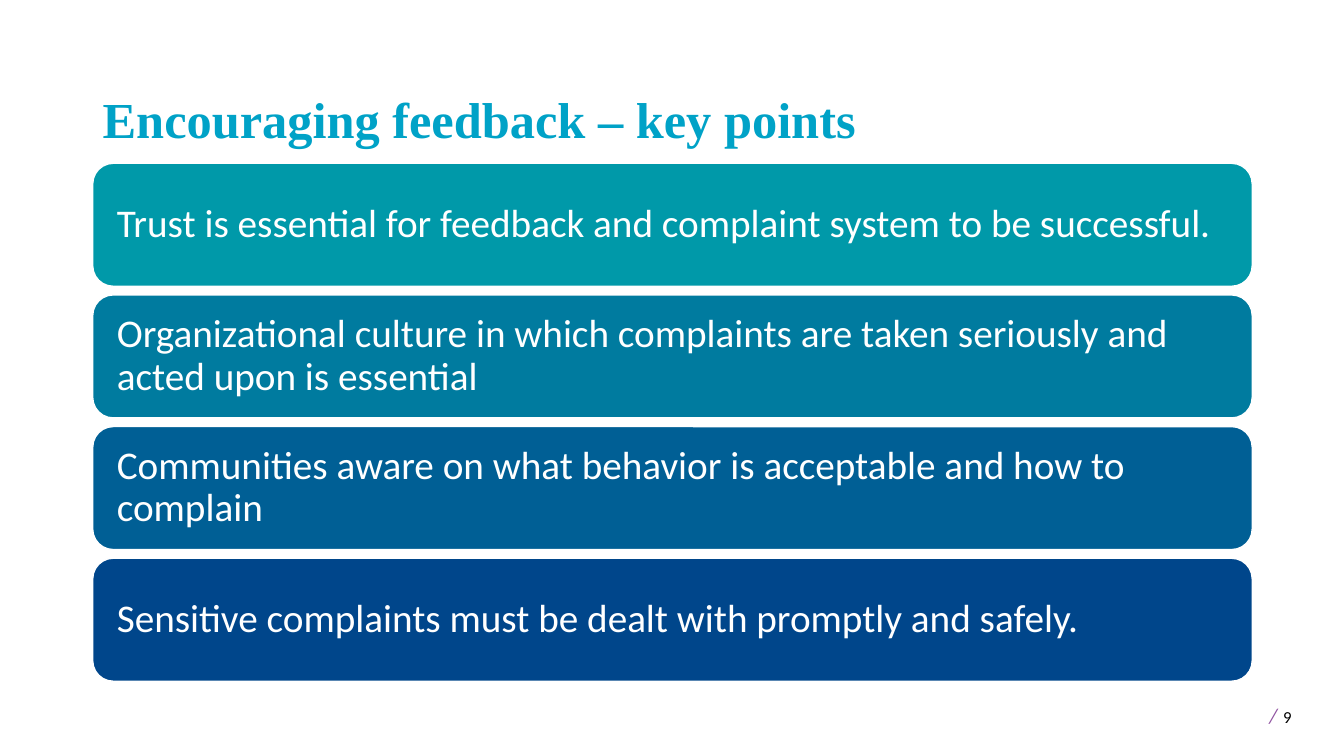
from dataclasses import dataclass

from pptx import Presentation
from pptx.dml.color import RGBColor
from pptx.enum.shapes import MSO_SHAPE as Shape
from pptx.enum.text import MSO_ANCHOR as Anchor, PP_ALIGN as Align
from pptx.slide import Slide
from pptx.text.text import Font, TextFrame
from pptx.util import Inches, Pt

COLORS = {
    "title": "00A2C7",
    "white": "FFFFFF",
    "black": "000000",
    "slash": "9053A1",
    "teal": "0099A9",
    "cyan": "007B9F",
    "blue": "005F95",
    "navy": "00468B",
}

LEFT, WIDTH = 0.92, 11.5
BAR_TOP, BAR_HEIGHT, BAR_PITCH = 1.62, 1.22, 1.306


@dataclass(frozen=True)
class KeyPoint:
    text: str
    color: str


@dataclass(frozen=True)
class TextStyle:
    size: float
    color: str
    name: str = "Calibri"
    bold: bool = False
    italic: bool = False


KEY_POINTS = [
    KeyPoint("Trust is essential for feedback and complaint system to be successful.", "teal"),
    KeyPoint("Organizational culture in which complaints are taken seriously and acted upon is essential", "cyan"),
    KeyPoint("Communities aware on what behavior is acceptable and how to complain", "blue"),
    KeyPoint("Sensitive complaints must be dealt with promptly and safely.", "navy"),
]

TITLE_STYLE = TextStyle(36, "title", "Times New Roman", bold=True)
POINT_STYLE = TextStyle(28, "white")
PAGE_RUNS = [
    ("/", TextStyle(15, "slash", italic=True)),
    (" ", TextStyle(18, "black")),
    ("9", TextStyle(12, "black")),
]


def color(name: str) -> RGBColor:
    return RGBColor.from_string(COLORS[name])


def style_font(font: Font, style: TextStyle) -> None:
    formats = {"name": style.name, "size": Pt(style.size), "bold": style.bold, "italic": style.italic}
    for attribute, value in formats.items():
        setattr(font, attribute, value)
    font.color.rgb = color(style.color)


def fill_text(frame: TextFrame, runs: list[tuple[str, TextStyle]], anchor: Anchor,
              side: float = 0.1, edge: float = 0.05, line_spacing: float = 0.9) -> None:
    formats = {
        "word_wrap": True,
        "vertical_anchor": anchor,
        "margin_left": Inches(side),
        "margin_right": Inches(side),
        "margin_top": Inches(edge),
        "margin_bottom": Inches(edge),
    }
    for attribute, value in formats.items():
        setattr(frame, attribute, value)
    paragraph = frame.paragraphs[0]
    paragraph.alignment = Align.LEFT
    paragraph.line_spacing = line_spacing
    for text, style in runs:
        run = paragraph.add_run()
        run.text = text
        style_font(run.font, style)


def add_key_point(slide: Slide, point: KeyPoint, top: float) -> None:
    bar = slide.shapes.add_shape(Shape.ROUNDED_RECTANGLE, Inches(LEFT), Inches(top),
                                 Inches(WIDTH), Inches(BAR_HEIGHT))
    bar.shadow.inherit = False
    bar.fill.solid()
    bar.fill.fore_color.rgb = color(point.color)
    bar.line.color.rgb = color("white")
    bar.line.width = Pt(1)
    fill_text(bar.text_frame, [(point.text, POINT_STYLE)], Anchor.MIDDLE, side=0.18, edge=0.18)


def main() -> None:
    presentation = Presentation()
    presentation.slide_width = Inches(13.33)
    presentation.slide_height = Inches(7.5)
    slide = presentation.slides.add_slide(presentation.slide_layouts[6])

    # Title
    title = slide.shapes.add_textbox(Inches(LEFT), Inches(0.4), Inches(WIDTH), Inches(1.13))
    fill_text(title.text_frame, [("Encouraging feedback – key points", TITLE_STYLE)], Anchor.BOTTOM)

    # Key points, one bar each
    for index, point in enumerate(KEY_POINTS):
        add_key_point(slide, point, BAR_TOP + index * BAR_PITCH)

    # Page number
    page = slide.shapes.add_textbox(Inches(12.43), Inches(6.88), Inches(0.87), Inches(0.4))
    fill_text(page.text_frame, PAGE_RUNS, Anchor.TOP, side=0.16, line_spacing=1.0)

    presentation.save("out.pptx")


if __name__ == "__main__":
    main()
